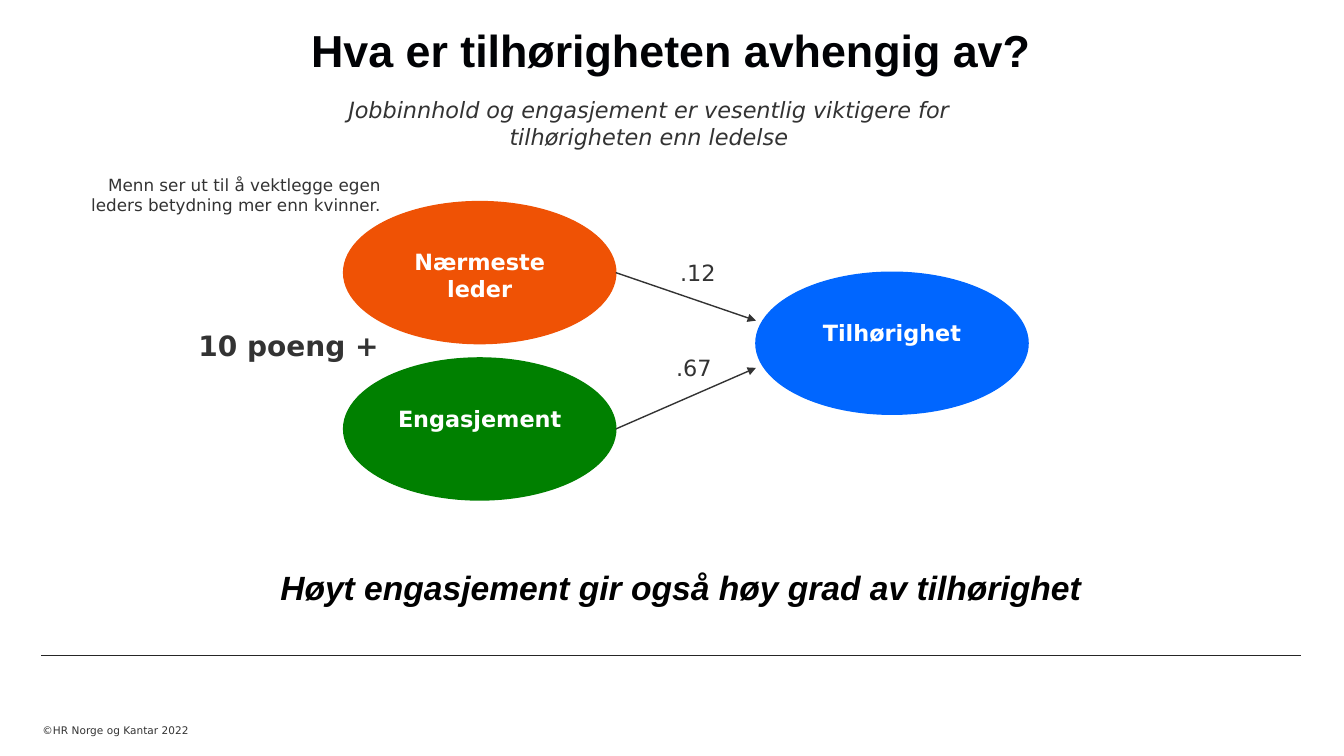
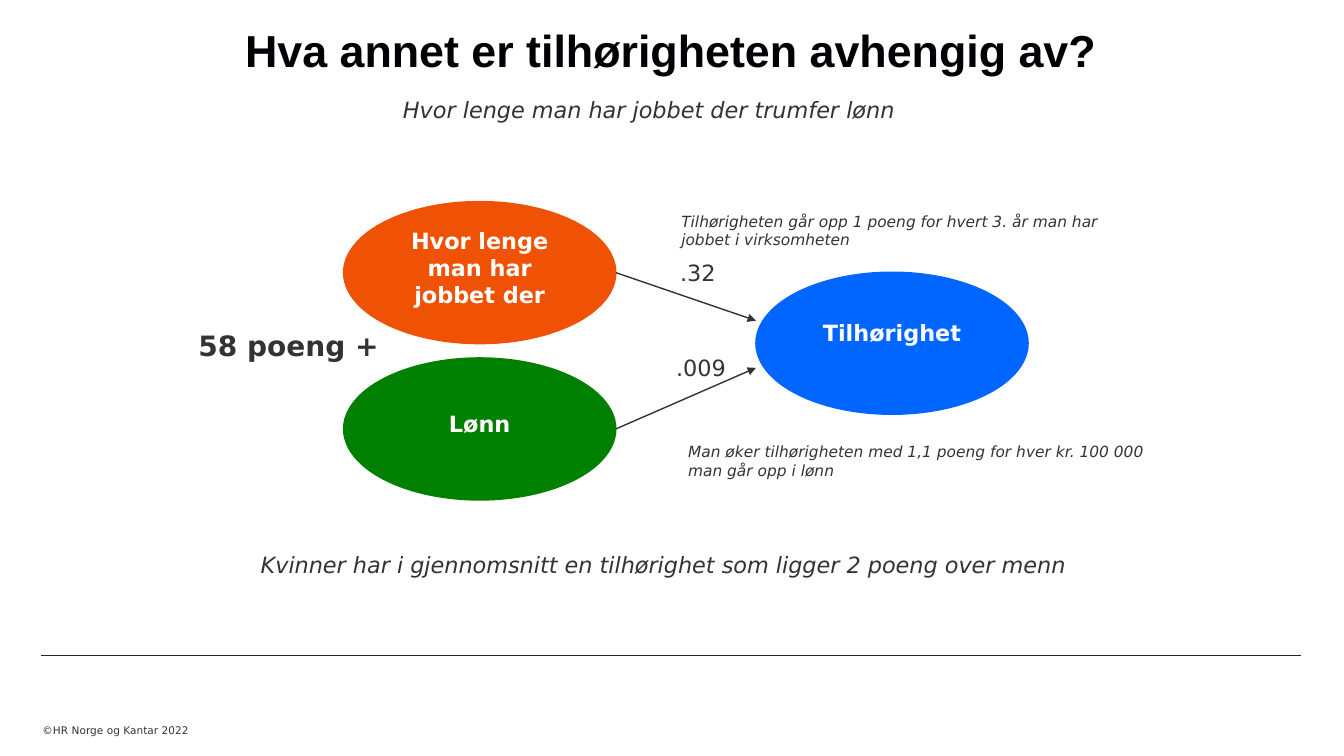
"""Build two slides showing what belonging at work depends on."""
from lxml.etree import SubElement
from pptx import Presentation
from pptx.dml.color import RGBColor
from pptx.enum.shapes import MSO_CONNECTOR as Link, MSO_SHAPE as Form
from pptx.enum.text import MSO_ANCHOR as Anchor, MSO_AUTO_SIZE as Fit, PP_ALIGN as Align
from pptx.oxml.ns import qn
from pptx.util import Cm, Pt

rgb = RGBColor.from_string
SANS, HEAD = "DejaVu Sans", "Arial"
INK = "333333"
WIDE, HIGH = 6.86, 3.58
LEFT, RIGHT = 8.66, 19.05
MID = HIGH / 2


def write(frame, text, size, color=INK, face=SANS, align=Align.LEFT, bold=False, slant=False):
    frame.word_wrap = True
    frame.auto_size = Fit.NONE
    frame.text = text
    para = frame.paragraphs[0]
    para.alignment = align
    font = para.runs[0].font
    font.name, font.size = face, Pt(size)
    font.bold, font.italic = bold, slant
    font.color.rgb = rgb(color)


def draw(slide, start, end, color, width, arrow=False):
    line = slide.shapes.add_connector(Link.STRAIGHT, *map(Cm, start + end))
    line.line.color.rgb = rgb(color)
    line.line.width = Pt(width)
    if arrow:
        SubElement(line.line._get_or_add_ln(), qn("a:tailEnd"), type="triangle")
    SubElement(line._element.spPr, qn("a:effectLst"))


note = dict(size=11, slant=True)
lead = dict(size=16, slant=True, align=Align.CENTER)
pages = [
    dict(
        title="Hva er tilhørigheten avhengig av?",
        top=("Nærmeste leder", 0.66),
        low=("Engasjement", 0.66),
        marks=(".12", ".67", "10 poeng +"),
        notes=[
            ((7.82, 2.31, 17.07, 1.63),
             "Jobbinnhold og engasjement er vesentlig viktigere for tilhørigheten enn ledelse", lead),
            ((4.19, 14.17, 25.93, 1.27), "Høyt engasjement gir også høy grad av tilhørighet",
             dict(size=24, color="000000", face=HEAD, align=Align.CENTER, bold=True, slant=True)),
            ((1.98, 4.27, 7.87, 1.27),
             "Menn ser ut til å vektlegge egen leders betydning mer enn kvinner.",
             dict(size=12, align=Align.RIGHT)),
        ],
    ),
    dict(
        title="Hva annet er tilhørigheten avhengig av?",
        top=("Hvor lenge man har jobbet der", 0.13),
        low=("Lønn", 0.79),
        marks=(".32", ".009", "58 poeng +"),
        notes=[
            ((7.82, 2.31, 17.07, 0.94), "Hvor lenge man har jobbet der trumfer lønn", lead),
            ((6.32, 13.77, 21.5, 0.94),
             "Kvinner har i gjennomsnitt en tilhørighet som ligger 2 poeng over menn",
             dict(size=16, slant=True)),
            ((17.09, 11.02, 12.14, 1.19),
             "Man øker tilhørigheten med 1,1 poeng for hver kr. 100 000 man går opp i lønn", note),
            ((16.92, 5.21, 12.14, 1.19),
             "Tilhørigheten går opp 1 poeng for hvert 3. år man har jobbet i virksomheten", note),
        ],
    ),
]

deck = Presentation()
deck.slide_width, deck.slide_height = Cm(33.87), Cm(19.05)
plan = deck.slide_layouts[5]
head = plan.placeholders[0]
head.left, head.top, head.width, head.height = map(Cm, (1.04, 0, 31.75, HIGH))

for page in pages:
    slide = deck.slides.add_slide(plan)
    frame = slide.shapes.title.text_frame
    write(frame, page["title"], 32, "010205", HEAD, Align.CENTER, bold=True)
    frame.vertical_anchor = Anchor.TOP
    frame.margin_left = frame.margin_right = frame.margin_bottom = 0
    frame.margin_top = Cm(0.58)

    foot = slide.shapes.add_textbox(*map(Cm, (1.07, 17.83, 6, 1.22))).text_frame
    write(foot, "©HR Norge og Kantar 2022", 7.5)
    foot.vertical_anchor = Anchor.BOTTOM
    foot.margin_left = foot.margin_top = foot.margin_right = 0
    foot.margin_bottom = Cm(0.48)
    draw(slide, (1.04, 16.51), (32.79, 16.51), "262626", 0.75)

    for x, y, color, (text, inset) in (
        (LEFT, 9.02, "008000", page["low"]),
        (LEFT, 5.08, "EF5205", page["top"]),
        (RIGHT, 6.86, "0066FF", ("Tilhørighet", 0.66)),
    ):
        oval = slide.shapes.add_shape(Form.OVAL, *map(Cm, (x, y, WIDE, HIGH)))
        oval.shadow.inherit = False
        oval.fill.solid()
        oval.fill.fore_color.rgb = oval.line.color.rgb = rgb(color)
        oval.line.width = Pt(1)
        write(oval.text_frame, text, 16, "FFFFFF", align=Align.CENTER, bold=True)
        oval.text_frame.vertical_anchor = Anchor.TOP
        oval.text_frame.margin_top = Cm(inset)

    for y, end in ((5.08, 8.08), (9.02, 9.27)):
        draw(slide, (LEFT + WIDE, y + MID), (RIGHT, end), INK, 1, arrow=True)

    first, second, base = page["marks"]
    labels = [
        ((16.89, 6.4, 2, 0.94), first, dict(size=16)),
        ((16.79, 8.81, 2, 0.94), second, dict(size=16)),
        ((4.75, 8.15, 5.5, 1.12), base, dict(size=20, bold=True)),
    ]
    for place, text, style in labels + page["notes"]:
        box = slide.shapes.add_textbox(*map(Cm, place))
        write(box.text_frame, text, **style)

deck.save("out.pptx")
